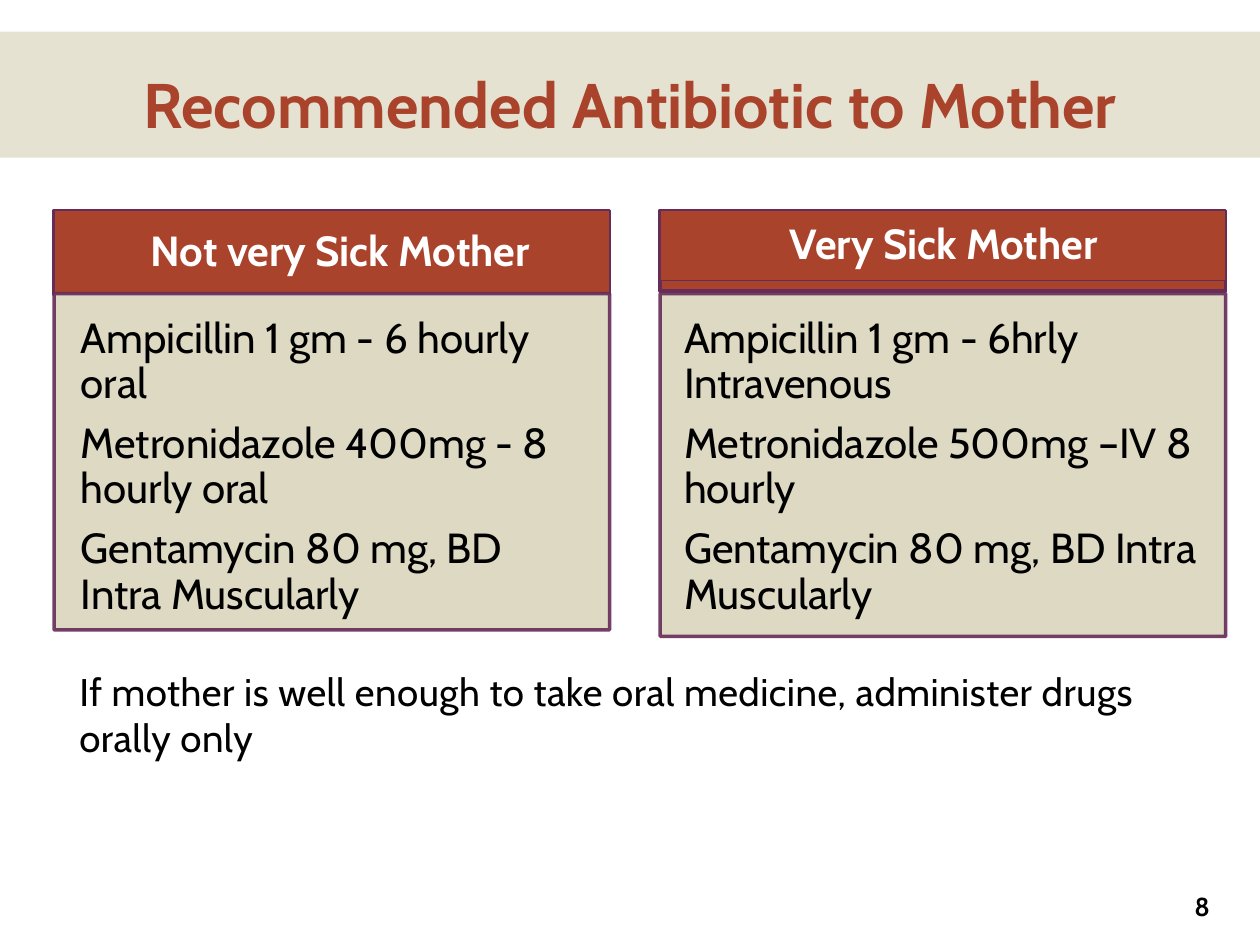
"""Build a slide comparing antibiotics for two groups of mothers."""
import pptx
import pptx.dml.color
import pptx.enum.shapes
import pptx.enum.text
import pptx.oxml.ns
import pptx.util
from lxml import etree

Cm = pptx.util.Cm
Pt = pptx.util.Pt
ALIGN = pptx.enum.text.PP_ALIGN
ANCHOR = pptx.enum.text.MSO_ANCHOR
COLORS = {"red": "A9432B", "sand": "DDD9C3", "plum": "662C57",
          "white": "FFFFFF", "black": "000000"}
INSETS = (0, 0.3, 0.3, 0.3)


def tint(name):
    return pptx.dml.color.RGBColor.from_string(COLORS[name])


def fade(fill, part):
    color = fill.find(".//" + pptx.oxml.ns.qn("a:srgbClr"))
    alpha = etree.SubElement(color, pptx.oxml.ns.qn("a:alpha"))
    alpha.set("val", str(part * 1000))


def add_rect(slide, box, fill, width=0):
    shape = slide.shapes.add_shape(
        pptx.enum.shapes.MSO_SHAPE.RECTANGLE, *map(Cm, box))
    shape.shadow.inherit = False
    shape.fill.solid()
    shape.fill.fore_color.rgb = tint(fill)
    if width:
        shape.line.color.rgb = tint("plum")
        shape.line.width = Pt(width)
    else:
        shape.line.fill.background()
    return shape


def write(shape, lines, size, color="black", bold=False, align=ALIGN.LEFT,
          anchor=ANCHOR.MIDDLE, insets=None, space=None, after=0, indent=0):
    frame = shape.text_frame
    frame.word_wrap = True
    frame.vertical_anchor = anchor
    if insets:
        (frame.margin_left, frame.margin_top,
         frame.margin_right, frame.margin_bottom) = map(Cm, insets)
    frame.text = "\n".join(lines)
    for para in frame.paragraphs:
        para.alignment = align
        para.line_spacing = space
        para.space_after = Pt(after)
        if indent:
            props = para._p.get_or_add_pPr()
            props.set("marL", str(Cm(indent)))
            props.set("indent", "0")
        font = para.font
        font.name, font.size, font.bold = "Cabin", Pt(size), bold
        font.color.rgb = tint(color)


def add_text(slide, box, lines, size, **style):
    shape = slide.shapes.add_textbox(*map(Cm, box))
    write(shape, lines, size, **style)
    return shape


def add_panel(slide, left, width, bar, label, depth, indent, start, span,
              head, drugs):
    style = dict(insets=INSETS, space=0.9, after=8.4)
    add_rect(slide, (left, 4.24, width, bar), "red", 2)
    title = add_rect(slide, (left, 4.24, width, label), "red", 0.75)
    write(title, [head], 24, color="white", bold=True, align=ALIGN.CENTER,
          indent=indent, **style)
    body = add_rect(slide, (left, 5.92, width, depth), "sand", 2)
    fade(body.line._ln, 90)
    add_text(slide, (start, 6.15, span, 6.55), drugs, 24, **style)


def main():
    deck = pptx.Presentation()
    deck.slide_width, deck.slide_height = Cm(25.4), Cm(19.05)
    slide = deck.slides.add_slide(deck.slide_layouts[6])

    band = add_rect(slide, (0, 0.64, 25.4, 2.54), "sand")
    fade(band._element.spPr, 76)
    add_text(slide, (22.2, 17.86, 2.44, 0.81), ["8"], 14.8, bold=True,
             align=ALIGN.RIGHT)
    note = add_text(
        slide, (1.35, 13.34, 22.96, 2.54),
        ["If mother is well enough to take oral medicine, "
         "administer drugs orally only"], 22, anchor=ANCHOR.TOP)
    for run in note.text_frame.paragraphs[0].runs:
        run._r.get_or_add_rPr().set("spc", "30")
    add_text(slide, (0.76, 0.64, 23.88, 2.34),
             ["Recommended Antibiotic to Mother"], 36, color="red",
             bold=True, align=ALIGN.CENTER, anchor=ANCHOR.BOTTOM)

    shot = "Gentamycin 80 mg, BD Intra Muscularly"
    add_panel(slide, 1.09, 11.2, 1.7, 1.7, 6.78, 0.64, 1.63, 10.59,
              "Not very Sick Mother",
              ["Ampicillin 1 gm - 6 hourly oral",
               "Metronidazole 400mg - 8 hourly oral", shot])
    add_panel(slide, 13.31, 11.4, 1.63, 1.42, 6.91, 0.33, 13.79, 10.95,
              "Very Sick Mother",
              ["Ampicillin 1 gm - 6hrly Intravenous",
               "Metronidazole 500mg –IV 8 hourly", shot])
    deck.save("out.pptx")


if __name__ == "__main__":
    main()
